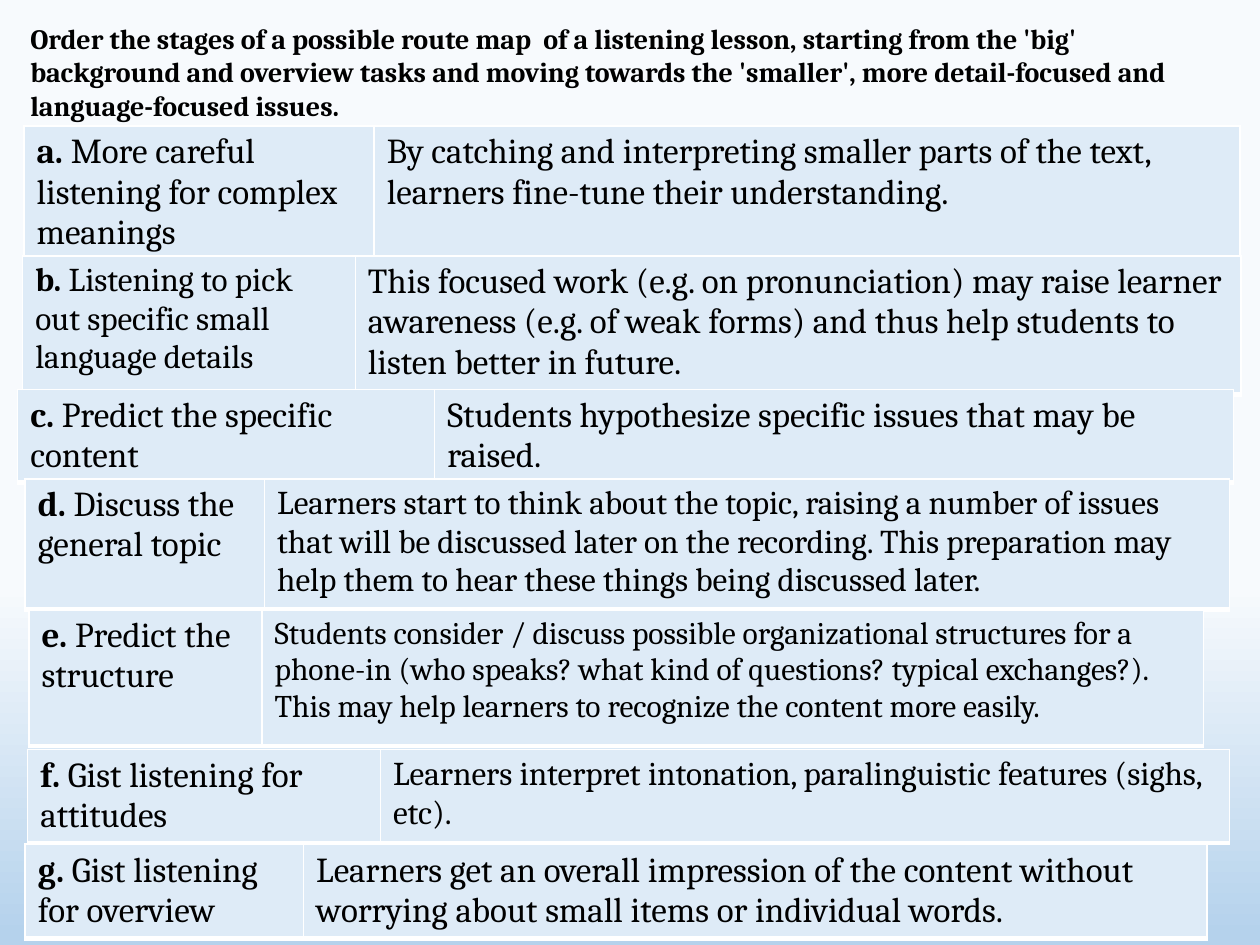
"""Build a slide that lists the stages of a listening lesson as strips to put in order."""
from lxml.etree import SubElement
from pptx import Presentation
from pptx.dml.color import RGBColor
from pptx.enum.text import MSO_ANCHOR, PP_ALIGN
from pptx.oxml.ns import qn
from pptx.util import Inches, Pt

FONT = "Cambria"
COLORS = {"text": "000000", "strip": "DEEBF7", "border": "FFFFFF",
          "sky": "F7FAFD", "blue": "B5D2EC", "pale": "CEE1F2"}
BACKGROUND_STOPS = [(62, "sky"), (99, "blue"), (100, "blue"), (100, "pale")]
BORDERS = [("lnL", 1), ("lnR", 1), ("lnT", 1), ("lnB", 3)]

INSTRUCTION = ("Order the stages of a possible route map  of a listening lesson, starting from "
               "the 'big' background and overview tasks and moving towards the 'smaller', more "
               "detail-focused and language-focused issues.")
STAGES = [
    {"letter": "a.", "name": " More careful listening for complex meanings",
     "purpose": "By catching and interpreting smaller parts of the text, learners fine-tune "
                "their understanding.",
     "corner": (0.19, 1), "columns": (2.78, 6.87), "height": 1.07, "sizes": (20, 20)},
    {"letter": "b.", "name": " Listening to pick out specific small language details",
     "purpose": "This focused work (e.g. on pronunciation) may raise learner awareness (e.g. of "
                "weak forms) and thus help students to listen better in future.",
     "corner": (0.18, 2.03), "columns": (2.64, 7.03), "height": 1.1, "sizes": (19, 20)},
    {"letter": "c. ", "name": "Predict the specific content",
     "purpose": "Students hypothesize specific issues that may be raised.",
     "corner": (0.14, 3.09), "columns": (3.31, 6.34), "height": 0.55, "sizes": (20, 20)},
    {"letter": "d. ", "name": "Discuss the general topic",
     "purpose": "Learners start to think about the topic, raising a number of issues that will "
                "be discussed later on the recording. This preparation may help them to hear "
                "these things being discussed later.",
     "corner": (0.2, 3.8), "columns": (1.9, 7.66), "height": 1.04, "sizes": (20, 19)},
    {"letter": "e. ", "name": "Predict the structure",
     "purpose": "Students consider / discuss possible organizational structures for a phone-in "
                "(who speaks? what kind of questions? typical exchanges?). This may help "
                "learners to recognize the content more easily.",
     "corner": (0.23, 4.84), "columns": (1.85, 7.47), "height": 1.08, "sizes": (20, 18)},
    {"letter": "f. ", "name": "Gist listening for attitudes",
     "purpose": "Learners interpret intonation, paralinguistic features (sighs, etc).",
     "corner": (0.22, 5.95), "columns": (2.8, 6.74), "height": 0.63, "sizes": (20, 19)},
    {"letter": "g. ", "name": "Gist listening for overview",
     "purpose": "Learners get an overall impression of the content without worrying about small "
                "items or individual words.",
     "corner": (0.2, 6.7), "columns": (2.21, 7.17), "height": 0.75, "sizes": (20, 20)},
]


def add_run(paragraph, text, size, bold=False):
    run = paragraph.add_run()
    run.text = text
    run.font.name = FONT
    run.font.size = Pt(size)
    run.font.bold = bold
    run.font.color.rgb = RGBColor.from_string(COLORS["text"])


def paint_background(slide):
    fill = slide.background.fill
    fill.gradient()
    fill.gradient_angle = 270
    stops = next(slide.element.iter(qn("a:gsLst")))
    for stop in list(stops):
        stops.remove(stop)
    for percent, color in BACKGROUND_STOPS:
        stop = SubElement(stops, qn("a:gs"), pos=str(percent * 1000))
        SubElement(stop, qn("a:srgbClr"), val=COLORS[color])


def style_cell(cell):
    properties = cell._tc.get_or_add_tcPr()
    for side, width in BORDERS:
        line = SubElement(properties, qn(f"a:{side}"), w=str(Pt(width)))
        solid = SubElement(line, qn("a:solidFill"))
        SubElement(solid, qn("a:srgbClr"), val=COLORS["border"])
    cell.fill.solid()
    cell.fill.fore_color.rgb = RGBColor.from_string(COLORS["strip"])


def add_instruction(slide):
    title = slide.shapes.title
    title.left, title.top, title.width, title.height = map(Inches, (0.14, 0.12, 9.47, 0.91))
    frame = title.text_frame
    frame.word_wrap = True
    frame.vertical_anchor = MSO_ANCHOR.TOP
    frame.paragraphs[0].alignment = PP_ALIGN.LEFT
    add_run(frame.paragraphs[0], INSTRUCTION, 16, bold=True)


def add_stage(slide, stage):
    left, top = stage["corner"]
    strip = slide.shapes.add_table(1, 2, Inches(left), Inches(top),
                                   Inches(sum(stage["columns"])), Inches(stage["height"])).table
    strip.first_row = strip.horz_banding = False
    contents = [[(stage["letter"], True), (stage["name"], False)], [(stage["purpose"], False)]]
    for index, (width, size, parts) in enumerate(zip(stage["columns"], stage["sizes"], contents)):
        strip.columns[index].width = Inches(width)
        cell = strip.cell(0, index)
        style_cell(cell)
        for text, bold in parts:
            add_run(cell.text_frame.paragraphs[0], text, size, bold)


def main():
    deck = Presentation()
    deck.slide_width, deck.slide_height = Inches(10), Inches(7.5)
    slide = deck.slides.add_slide(deck.slide_layouts[5])
    paint_background(slide)
    add_instruction(slide)
    for stage in STAGES:
        add_stage(slide, stage)
    deck.save("out.pptx")


if __name__ == "__main__":
    main()
